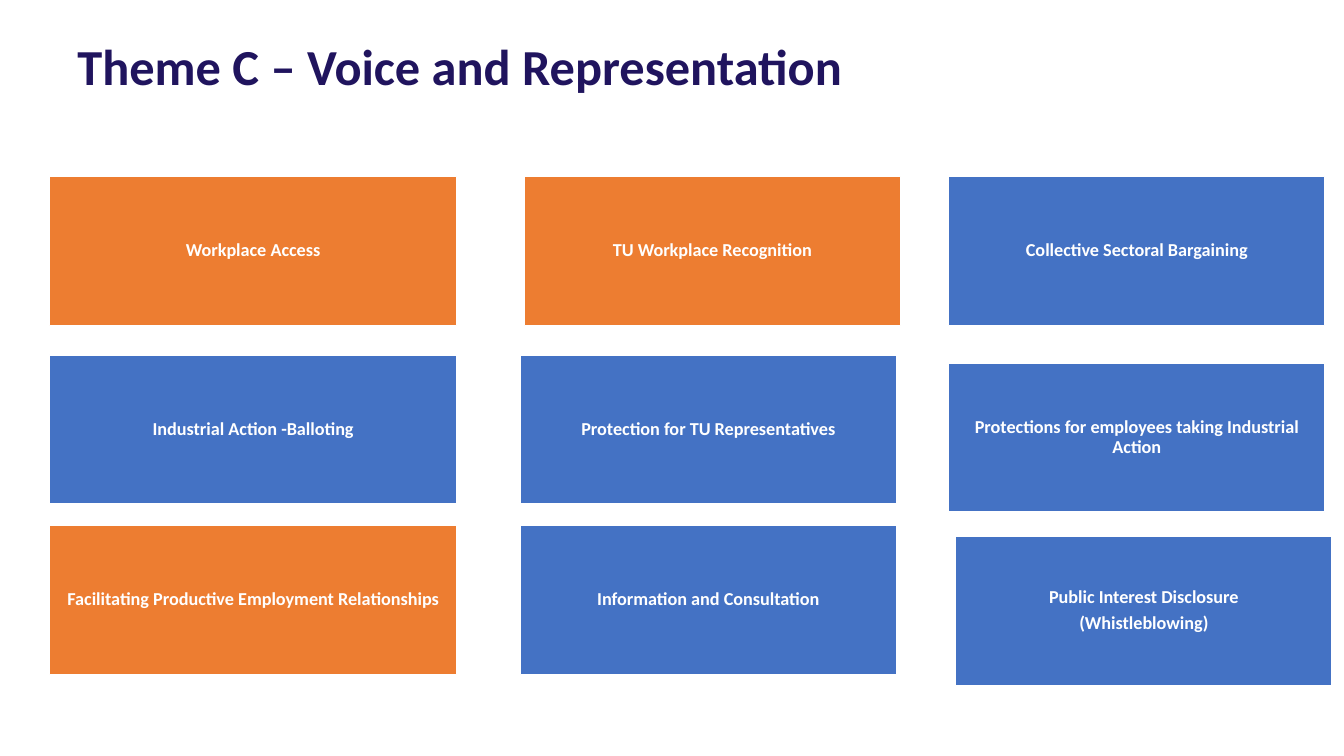
import pptx
import pptx.util
from pptx.dml.color import RGBColor
from pptx.enum.shapes import MSO_SHAPE
from pptx.enum.text import MSO_ANCHOR, PP_ALIGN
from pptx.util import Inches, Pt

NAVY = RGBColor(0x20, 0x14, 0x5E)
ORANGE = RGBColor(0xED, 0x7D, 0x31)
BLUE = RGBColor(0x44, 0x72, 0xC4)
WHITE = RGBColor(0xFF, 0xFF, 0xFF)
FONT = "Calibri"

TITLE = "Theme C – Voice and Representation"
WIDE, NARROW, CARD_HEIGHT = 4.04, 3.73, 1.48

# Each column: card width, then (left, top, fill, text) from top to bottom
COLUMNS = [
    (WIDE, [
        (0.49, 1.75, ORANGE, "Workplace Access"),
        (0.49, 3.52, BLUE, "Industrial Action -Balloting"),
        (0.49, 5.21, ORANGE, "Facilitating Productive Employment Relationships"),
    ]),
    (NARROW, [
        (5.2, 1.75, ORANGE, "TU Workplace Recognition"),
        (5.16, 3.52, BLUE, "Protection for TU Representatives"),
        (5.16, 5.21, BLUE, "Information and Consultation"),
    ]),
    (NARROW, [
        (9.41, 1.75, BLUE, "Collective Sectoral Bargaining"),
        (9.41, 3.6, BLUE, "Protections for employees taking Industrial Action"),
        (9.48, 5.32, BLUE, "Public Interest Disclosure\n(Whistleblowing)"),
    ]),
]


def style_text(frame, size, color, space_after):
    frame.word_wrap = True
    for para in frame.paragraphs:
        para.space_after = Pt(space_after)
        for span in para.runs:
            span.font.name = FONT
            span.font.size = Pt(size)
            span.font.bold = True
            span.font.color.rgb = color


def add_title(page):
    box = page.shapes.add_textbox(Inches(0.67), Inches(0.3), Inches(12), Inches(0.85))
    box.text_frame.text = TITLE
    style_text(box.text_frame, 36, NAVY, 6)


def add_card(page, left, top, width, fill, text):
    card = page.shapes.add_shape(MSO_SHAPE.RECTANGLE, Inches(left), Inches(top),
                                 Inches(width), Inches(CARD_HEIGHT))
    card.shadow.inherit = False
    card.fill.solid()
    card.fill.fore_color.rgb = fill
    card.line.color.rgb = WHITE
    card.line.width = Pt(1)
    frame = card.text_frame
    frame.margin_left = frame.margin_right = Inches(0.05)
    frame.margin_top = frame.margin_bottom = Inches(0.05)
    frame.vertical_anchor = MSO_ANCHOR.MIDDLE
    frame.text = text
    style_text(frame, 13, WHITE, 4.5)
    for para in frame.paragraphs:
        para.alignment = PP_ALIGN.CENTER
        para.line_spacing = 0.9


def main():
    deck = pptx.Presentation()
    deck.slide_width, deck.slide_height = Inches(13.33), Inches(7.5)
    page = deck.slides.add_slide(deck.slide_layouts[6])
    add_title(page)
    for width, cards in COLUMNS:
        for left, top, fill, text in cards:
            add_card(page, left, top, width, fill, text)
    deck.save("out.pptx")


if __name__ == "__main__":
    main()
